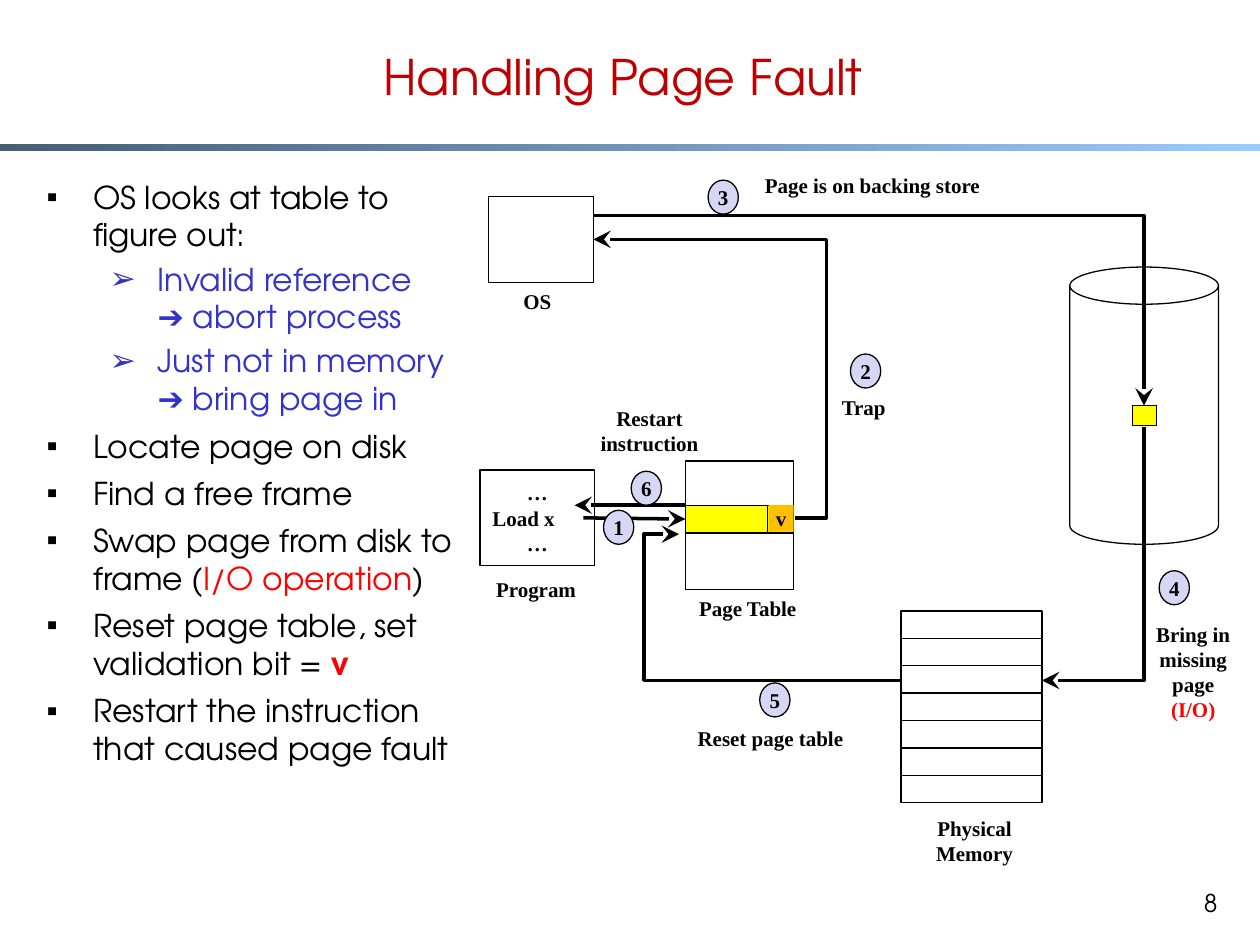
from lxml.etree import SubElement
from pptx import Presentation
from pptx.dml.color import RGBColor
from pptx.enum.shapes import MSO_CONNECTOR as CONN, MSO_SHAPE as SHAPE
from pptx.enum.text import MSO_ANCHOR as ANCHOR, MSO_AUTO_SIZE as AUTO, PP_ALIGN as ALIGN
from pptx.oxml.ns import qn
from pptx.util import Inches, Pt

SANS = {"name": "TeX Gyre Adventor", "size": Pt(18), "bold": False}
SERIF = {"name": "Times New Roman", "size": Pt(12), "bold": True}
BLACK, RED, BLUE = "000000", "FF0000", "3333CC"
YELLOW, WHITE = "FFFF00", "FFFFFF"

BULLETS = [
    (0, [("OS looks at table to figure out:", BLACK)]),
    (1, [("Invalid reference \n➔ abort process", BLUE)]),
    (1, [("Just not in memory ➔ bring page in", BLUE)]),
    (0, [("Locate page on disk", BLACK)]),
    (0, [("Find a free frame", BLACK)]),
    (0, [("Swap page from disk to frame (", BLACK), ("I/O operation", RED), (")", BLACK)]),
    (0, [("Reset page table, set validation bit = ", BLACK), ("v", RED, True)]),
    (0, [("Restart the instruction that caused page fault", BLACK)]),
]
LEVELS = [
    {"mark": "▪", "color": BLACK, "left": 0.37, "hang": 0.37, "before": 5.4},
    {"mark": "➢", "color": BLUE, "left": 0.88, "hang": 0.38, "before": 3.6},
]
STEPS = [("1", 4.79, 4.05), ("2", 6.75, 2.81), ("3", 5.62, 1.43),
         ("4", 9.2, 4.53), ("5", 6.03, 5.42), ("6", 5.01, 3.74)]
LABELS = [
    ("OS", 3.82, 2.24, 0.89, 0.3),
    ("Program", 3.72, 4.53, 1.07, 0.3),
    ("Page Table", 5.4, 4.68, 1.07, 0.3),
    ("Physical Memory", 7.2, 6.42, 1.07, 0.5),
    ("Trap", 6.51, 3.08, 0.69, 0.3),
    ("Page is on backing store", 5.87, 1.32, 2.11, 0.3),
    ("Reset page table", 5.39, 5.71, 1.45, 0.3),
    ("Restart instruction", 4.56, 3.17, 1.19, 0.5),
]


def rgb(color):
    return RGBColor.from_string(color)


def apply(target, values):
    for name, value in values.items():
        setattr(target, name, value)


def place(sp, x, y, w, h):
    apply(sp, {"left": Inches(x), "top": Inches(y), "width": Inches(w), "height": Inches(h)})


def add_run(p, text, font, color=BLACK, **extra):
    for i, part in enumerate(text.split("\n")):
        if i:
            p.add_line_break()
        r = p.add_run()
        r.text = part
        apply(r.font, {**font, **extra})
        r.font.color.rgb = rgb(color)


def add_lines(tf, lines, font=SERIF):
    for i, (text, align, color) in enumerate(lines):
        p = tf.add_paragraph() if i else tf.paragraphs[0]
        p.alignment = align
        add_run(p, text, font, color)


def add_box(s, kind, x, y, w, h, fill=None, line=BLACK, lines=()):
    sp = s.shapes.add_shape(kind, *map(Inches, (x, y, w, h)))
    sp.shadow.inherit = False
    if fill:
        sp.fill.solid()
        sp.fill.fore_color.rgb = rgb(fill)
    else:
        sp.fill.background()
    if line:
        sp.line.color.rgb = rgb(line)
        sp.line.width = Pt(0.75)
    else:
        sp.line.fill.background()
    tf = sp.text_frame
    tf.vertical_anchor = ANCHOR.MIDDLE
    add_lines(tf, lines)
    return sp


def add_tag(s, kind, text, x, y, w, h, **style):
    sp = add_box(s, kind, x, y, w, h, lines=[(text, ALIGN.CENTER, BLACK)], **style)
    apply(sp.text_frame, dict.fromkeys(
        ("margin_left", "margin_top", "margin_right", "margin_bottom"), 0))


def add_label(s, lines, x, y, w, h, font=SERIF):
    sp = s.shapes.add_textbox(*map(Inches, (x, y, w, h)))
    sp.text_frame.word_wrap = True
    add_lines(sp.text_frame, lines, font)


def add_line(s, x1, y1, x2, y2, kind=CONN.STRAIGHT, width=2, arrow=True):
    cx = s.shapes.add_connector(kind, *map(Inches, (x1, y1, x2, y2)))
    cx.line.color.rgb = rgb(BLACK)
    cx.line.width = Pt(width)
    if arrow:
        SubElement(cx.line._get_or_add_ln(), qn("a:tailEnd"), type="stealth", w="lg", len="lg")
    SubElement(cx._element.spPr, qn("a:effectLst"))
    return cx


def add_elbow(s, x1, y1, x2, y2, bend=None, turn=0):
    cx = add_line(s, x1, y1, x2, y2, CONN.ELBOW)
    spPr = cx._element.spPr
    geom = spPr.find(qn("a:prstGeom"))
    if bend is None:
        geom.set("prst", "bentConnector2")
    else:
        SubElement(geom.find(qn("a:avLst")), qn("a:gd"),
                   name="adj1", fmla=f"val {round(bend * 100000)}")
    if turn:
        spPr.find(qn("a:xfrm")).set("rot", str(turn * 60000))


def add_title(s):
    sp = s.shapes.title
    place(sp, 0.58, 0.15, 8.73, 0.91)
    tf = sp.text_frame
    apply(tf, {"vertical_anchor": ANCHOR.MIDDLE, "auto_size": AUTO.NONE})
    add_lines(tf, [("Handling Page Fault", ALIGN.CENTER, "C00000")], {**SANS, "size": Pt(28)})


def add_bullets(s):
    sp = s.placeholders[1]
    place(sp, 0.27, 1.36, 3.49, 5.51)
    tf = sp.text_frame
    tf.auto_size = AUTO.NONE
    for i, (level, runs) in enumerate(BULLETS):
        p = tf.add_paragraph() if i else tf.paragraphs[0]
        style = LEVELS[level]
        apply(p, {"level": level, "space_before": Pt(style["before"])})
        pPr = p._p.get_or_add_pPr()
        pPr.set("marL", str(Inches(style["left"])))
        pPr.set("indent", str(-Inches(style["hang"])))
        SubElement(SubElement(pPr, qn("a:buClr")), qn("a:srgbClr"), val=style["color"])
        SubElement(pPr, qn("a:buChar"), char=style["mark"])
        for text, color, *bold in runs:
            add_run(p, text, SANS, color, bold=bool(bold))


def add_rule(s):
    sp = add_box(s, SHAPE.RECTANGLE, 0, 1.14, 10, 0.06, line=None)
    sp.fill.gradient()
    sp.fill.gradient_angle = 0
    for stop, color in zip(sp.fill.gradient_stops, ("475E76", "99CCFF")):
        stop.color.rgb = rgb(color)


def add_diagram(s):
    rect = SHAPE.RECTANGLE
    add_box(s, rect, 3.81, 3.73, 0.91, 0.76, lines=[
        ("…", ALIGN.CENTER, BLACK), ("Load x", ALIGN.LEFT, BLACK), ("…", ALIGN.CENTER, BLACK)])
    add_box(s, rect, 3.88, 1.56, 0.83, 0.68, WHITE)
    add_box(s, SHAPE.CAN, 8.49, 2.12, 1.18, 2.2)
    add_box(s, rect, 8.99, 3.22, 0.19, 0.16, YELLOW)
    add_box(s, rect, 5.44, 3.66, 0.86, 1.02)
    entry = add_box(s, rect, 5.44, 4.01, 0.86, 0.22, YELLOW)
    add_tag(s, rect, "v", 6.1, 4.01, 0.2, 0.21, fill="FFC000", line=None)
    add_line(s, 6.09, 4.01, 6.09, 4.22, width=0.75, arrow=False)
    frame_h = 1.52 / 7
    for i in range(7):
        add_box(s, rect, 7.15, 4.85 + i * frame_h, 1.12, frame_h, WHITE)

    add_line(s, 4.63, 4.11, 5.44, 4.12).end_connect(entry, 1)
    add_line(s, 5.44, 4.01, 4.56, 4.01)
    add_elbow(s, 6.31, 4.11, 4.71, 1.9, bend=-0.156)
    add_elbow(s, 4.71, 1.71, 9.08, 3.22)
    add_elbow(s, 7.67, 3.99, 9.68, 4.8, turn=90)
    add_elbow(s, 7.15, 5.4, 5.39, 4.24, bend=1.159)

    for number, x, y in STEPS:
        add_tag(s, SHAPE.OVAL, number, x, y, 0.24, 0.27, fill="D6D6F5")
    for text, *box in LABELS:
        add_label(s, [(text, ALIGN.CENTER, BLACK)], *box)
    add_label(s, [("Bring in missing page", ALIGN.CENTER, BLACK), ("(I/O)", ALIGN.CENTER, RED)],
              9.03, 4.88, 0.88, 0.91)


def main():
    prs = Presentation()
    apply(prs, {"slide_width": Inches(10), "slide_height": Inches(7.5)})
    s = prs.slides.add_slide(prs.slide_layouts[1])
    add_rule(s)
    add_title(s)
    add_bullets(s)
    add_diagram(s)
    add_label(s, [("8", ALIGN.RIGHT, BLACK)], 9.08, 7, 0.68, 0.5, {**SANS, "size": Pt(14)})
    prs.save("out.pptx")


if __name__ == "__main__":
    main()
